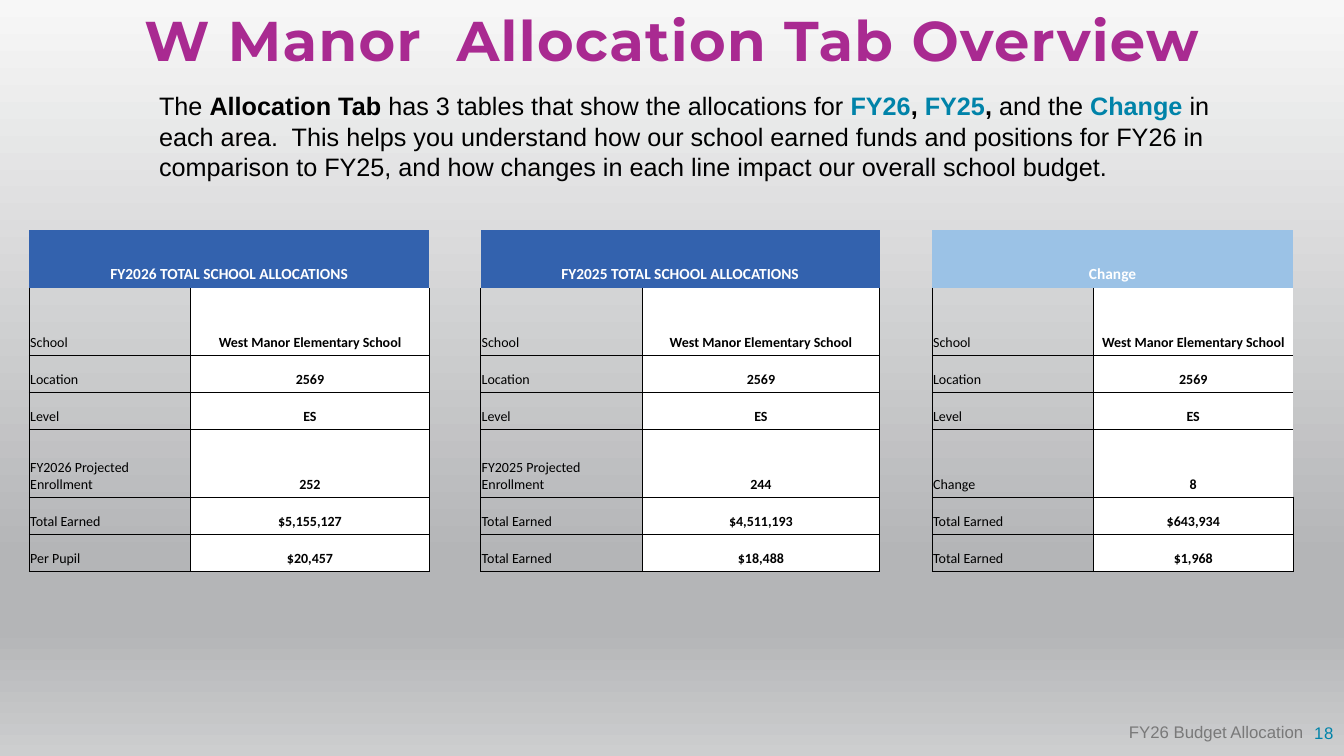
from dataclasses import dataclass

from lxml.etree import SubElement
from pptx import Presentation
from pptx.dml.color import RGBColor
from pptx.enum.text import MSO_ANCHOR, MSO_AUTO_SIZE, PP_ALIGN
from pptx.oxml import parse_xml
from pptx.oxml.ns import nsdecls, qn
from pptx.util import Pt


@dataclass(frozen=True)
class Theme:
    magenta: str = "A92A91"
    teal: str = "0083A9"
    grey: str = "797979"
    black: str = "000000"
    white: str = "FFFFFF"
    year_blue: str = "3362AE"
    change_blue: str = "9BC2E6"
    backdrop: tuple = ((0, "F7F7F7"), (74, "B4B5B7"), (83, "B4B5B7"), (100, "CDCECF"))
    heading_font: str = "Montserrat"
    body_font: str = "Arial"
    table_font: str = "Calibri"
    title_size: int = 40
    intro_size: int = 18
    footer_size: int = 12
    header_size: int = 11
    cell_size: int = 10
    border: float = 0.5


THEME = Theme()
NO_GRID_STYLE = "{2D5ABB26-0587-4C30-8999-92F81FD0307C}"

INTRO = [
    ("The ", THEME.black, False),
    ("Allocation Tab", THEME.black, True),
    (" has 3 tables that show the allocations for ", THEME.black, False),
    ("FY26", THEME.teal, True),
    (", ", THEME.black, True),
    ("FY25", THEME.teal, True),
    (", ", THEME.black, True),
    ("and the ", THEME.black, False),
    ("Change", THEME.teal, True),
    (" in each area.  This helps you understand how our school earned funds and "
     "positions for FY26 in comparison to FY25, and how changes in each line impact "
     "our overall school budget.", THEME.black, False),
]

SCHOOL_ROWS = [("School", "West Manor Elementary School"), ("Location", "2569"), ("Level", "ES")]
ALLOCATIONS = [
    ("FY2026 TOTAL SCHOOL ALLOCATIONS", THEME.year_blue,
     [("FY2026 Projected Enrollment", "252"), ("Total Earned", "$5,155,127"),
      ("Per Pupil", "$20,457")]),
    ("FY2025 TOTAL SCHOOL ALLOCATIONS", THEME.year_blue,
     [("FY2025 Projected Enrollment", "244"), ("Total Earned", "$4,511,193"),
      ("Total Earned", "$18,488")]),
    ("Change", THEME.change_blue,
     [("Change", "8"), ("Total Earned", "$643,934"), ("Total Earned", "$1,968")]),
]
COLUMN_WIDTHS = [115.2, 170.6, 36.7, 115.2, 169.9, 37.4, 115.2, 142.6]
ROW_HEIGHTS = [20.6, 20.6, 48, 26.7, 26.7, 48, 26.7, 26.7]
HEADER_ROWS = 2
FIRST_TOTAL_ROW = 6


def add_run(paragraph, text, font, size, color, bold=False, spacing=0):
    run = paragraph.add_run()
    run.text = text
    run.font.name = font
    run.font.size = Pt(size)
    run.font.bold = bold
    run.font.color.rgb = RGBColor.from_string(color)
    if spacing:
        run.font._element.set("spc", str(int(spacing * 100)))


def set_backdrop(slide):
    stops = "".join(f'<a:gs pos="{at * 1000}"><a:srgbClr val="{color}"/></a:gs>'
                    for at, color in THEME.backdrop)
    slide.element.cSld.insert(0, parse_xml(
        f'<p:bg {nsdecls("p", "a")}><p:bgPr><a:gradFill rotWithShape="1">'
        f'<a:gsLst>{stops}</a:gsLst><a:lin ang="5400000" scaled="0"/></a:gradFill>'
        '<a:effectLst/></p:bgPr></p:bg>'))


def set_frame(frame, anchor, inset=None):
    frame.word_wrap = True
    frame.auto_size = MSO_AUTO_SIZE.NONE
    frame.vertical_anchor = anchor
    if inset is not None:
        frame.margin_left = frame.margin_right = Pt(inset)
        frame.margin_top = frame.margin_bottom = Pt(inset)


def add_title(slide, text):
    title = slide.shapes.title
    title.left, title.top, title.width, title.height = Pt(58.3), Pt(9.4), Pt(843.8), Pt(47.5)
    set_frame(title.text_frame, MSO_ANCHOR.TOP, inset=0)
    heading = title.text_frame.paragraphs[0]
    heading.alignment = PP_ALIGN.CENTER
    heading.line_spacing = 0.9
    add_run(heading, text, THEME.heading_font, THEME.title_size, THEME.magenta,
            bold=True, spacing=1)


def add_text(slide, left, top, width, height, anchor, alignment, inset=None):
    box = slide.shapes.add_textbox(Pt(left), Pt(top), Pt(width), Pt(height))
    set_frame(box.text_frame, anchor, inset)
    paragraph = box.text_frame.paragraphs[0]
    paragraph.alignment = alignment
    return paragraph


def style_cell(cell, fill=None, borders=""):
    cell.vertical_anchor = MSO_ANCHOR.BOTTOM
    cell.margin_left = cell.margin_right = cell.margin_top = Pt(0.72)
    cell.margin_bottom = Pt(2.88)
    if fill:
        cell.fill.solid()
        cell.fill.fore_color.rgb = RGBColor.from_string(fill)
    else:
        cell.fill.background()
    # Border lines come before the fill, in the order left, right, top, bottom
    properties = cell._tc.get_or_add_tcPr()
    for position, side in enumerate(s for s in "LRTB" if s in borders):
        properties.insert(position, parse_xml(
            f'<a:ln{side} {nsdecls("a")} w="{Pt(THEME.border)}"><a:solidFill>'
            f'<a:srgbClr val="{THEME.black}"/></a:solidFill></a:ln{side}>'))


def keep_empty_cell_small(cell):
    end = SubElement(cell.text_frame.paragraphs[0]._p, qn("a:endParaRPr"))
    end.set("sz", str(THEME.cell_size * 100))


def write_cell(cell, text, size, color, bold, alignment):
    paragraph = cell.text_frame.paragraphs[0]
    paragraph.alignment = alignment
    add_run(paragraph, text, THEME.table_font, size, color, bold)


def fill_allocation(table, first_column, heading, color, rows):
    # Heading across both columns and both header rows
    header = table.cell(0, first_column)
    header.merge(table.cell(HEADER_ROWS - 1, first_column + 1))
    style_cell(header, color)
    write_cell(header, heading, THEME.header_size, THEME.white, True, PP_ALIGN.CENTER)

    # Label and value pairs
    for row, (label_text, value_text) in enumerate(rows, HEADER_ROWS):
        top = "T" if row > HEADER_ROWS else ""
        right = "R" if row >= FIRST_TOTAL_ROW else ""
        label, value = (table.cell(row, first_column + offset) for offset in (0, 1))
        style_cell(label, borders="LRB" + top)
        write_cell(label, label_text, THEME.cell_size, THEME.black, False, PP_ALIGN.LEFT)
        style_cell(value, THEME.white, "LB" + top + right)
        write_cell(value, value_text, THEME.cell_size, THEME.black, True, PP_ALIGN.CENTER)


def style_gap(table, column):
    for row in range(len(ROW_HEIGHTS)):
        borders = "" if row < HEADER_ROWS else "R" if row < FIRST_TOTAL_ROW else "LR"
        style_cell(table.cell(row, column), borders=borders)


def add_allocations(slide):
    table = slide.shapes.add_table(
        len(ROW_HEIGHTS), len(COLUMN_WIDTHS), Pt(20.9), Pt(164.4),
        Pt(sum(COLUMN_WIDTHS)), Pt(sum(ROW_HEIGHTS))).table
    table.first_row = table.horz_banding = False
    table._tbl.tblPr.find(qn("a:tableStyleId")).text = NO_GRID_STYLE
    for column, width in zip(table.columns, COLUMN_WIDTHS):
        column.width = Pt(width)
    for row, height in zip(table.rows, ROW_HEIGHTS):
        row.height = Pt(height)

    for index, (heading, color, rows) in enumerate(ALLOCATIONS):
        fill_allocation(table, 3 * index, heading, color, SCHOOL_ROWS + rows)
        if index:
            style_gap(table, 3 * index - 1)
    for cell in table.iter_cells():
        if not cell.text_frame.text:
            keep_empty_cell_small(cell)


def main():
    deck = Presentation()
    deck.slide_width, deck.slide_height = Pt(960), Pt(540)
    slide = deck.slides.add_slide(deck.slide_layouts[5])
    set_backdrop(slide)

    # Title and introduction
    add_title(slide, "W Manor  Allocation Tab Overview")
    intro = add_text(slide, 106.6, 61.2, 765.4, 72.7, MSO_ANCHOR.TOP, PP_ALIGN.LEFT)
    for text, color, bold in INTRO:
        add_run(intro, text, THEME.body_font, THEME.intro_size, color, bold)

    # Footer
    page = add_text(slide, 736.6, 509, 216, 28.8, MSO_ANCHOR.MIDDLE, PP_ALIGN.RIGHT, inset=0)
    add_run(page, "18", THEME.body_font, THEME.footer_size, THEME.teal, spacing=0.5)
    footer = add_text(slide, 784.8, 508.3, 153.4, 28.8, MSO_ANCHOR.MIDDLE, PP_ALIGN.RIGHT)
    add_run(footer, "FY26 Budget Allocation", THEME.body_font, THEME.footer_size, THEME.grey)

    # Three allocation tables side by side
    add_allocations(slide)
    deck.save("out.pptx")


if __name__ == "__main__":
    main()
